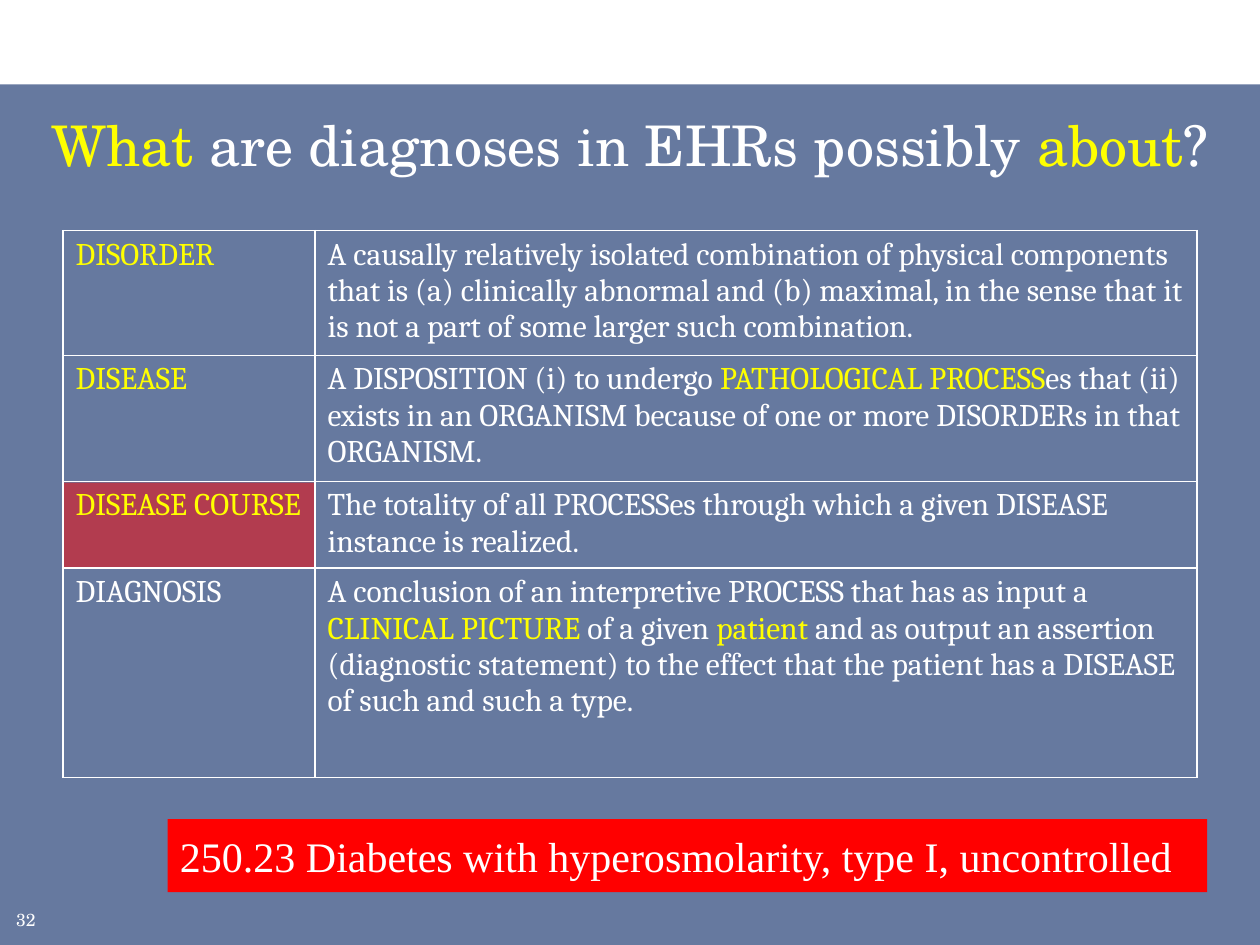
from lxml.etree import SubElement, fromstring
from pptx import Presentation
from pptx.dml.color import RGBColor
from pptx.enum.shapes import MSO_SHAPE
from pptx.enum.text import MSO_ANCHOR, PP_ALIGN
from pptx.oxml.ns import nsdecls, qn
from pptx.util import Inches, Pt

WHITE, YELLOW, RED, NAVY = "FFFFFF", "FFFF00", "FF0000", "002060"
SERIF, BODY = "TeX Gyre Schola", "Cambria"

# Each cell is a list of runs; highlighted runs are (text, colour) pairs
ROWS = [
    (0.99, [("DISORDER", YELLOW)],
     ["A causally relatively isolated combination of physical components that is "
      "(a) clinically abnormal and (b) maximal, in the sense that it is not a part "
      "of some larger such combination."]),
    (1, [("DISEASE", YELLOW)],
     ["A DISPOSITION (i) to undergo ", ("PATHOLOGICAL PROCESS", YELLOW),
      "es that (ii) exists in an ORGANISM because of one or more DISORDERs in that "
      "ORGANISM."]),
    (0.69, [("DISEASE COURSE", YELLOW)],
     ["The totality of all PROCESSes through which a given DISEASE instance is "
      "realized."]),
    (1.66, ["DIAGNOSIS"],
     ["A conclusion of an interpretive PROCESS that has as input a ",
      ("CLINICAL PICTURE ", YELLOW), "of a given ", ("patient", YELLOW),
      " and as output an assertion (diagnostic statement) to the effect that the "
      "patient has a DISEASE of such and such a type."]),
]


def rgb(color):
    return RGBColor.from_string(color)


def write(tf, runs, size, font, align=PP_ALIGN.LEFT, anchor=MSO_ANCHOR.TOP):
    tf.word_wrap = True
    tf.vertical_anchor = anchor
    p = tf.paragraphs[0]
    p.alignment = align
    for run in runs:
        text, color = (run, WHITE) if isinstance(run, str) else run
        r = p.add_run()
        r.text = text
        r.font.size = Pt(size)
        r.font.name = font
        r.font.bold = False
        r.font.color.rgb = rgb(color)


def add_rect(s, left, top, width, height, color, alpha=None):
    sp = s.shapes.add_shape(MSO_SHAPE.RECTANGLE, Inches(left), Inches(top),
                            Inches(width), Inches(height))
    sp.shadow.inherit = False
    sp.line.fill.background()
    sp.fill.solid()
    sp.fill.fore_color.rgb = rgb(color)
    if alpha is not None:
        clr = sp.fill._xPr.find(qn("a:solidFill"))[0]
        SubElement(clr, qn("a:alpha")).set("val", str(alpha * 1000))
    return sp


def set_borders(cell, color, width):
    tcPr = cell._tc.get_or_add_tcPr()
    for i, side in enumerate(("lnL", "lnR", "lnT", "lnB")):
        tcPr.insert(i, fromstring(
            f'<a:{side} {nsdecls("a")} w="{Pt(width)}"><a:solidFill>'
            f'<a:srgbClr val="{color}"/></a:solidFill></a:{side}>'))


def add_title(s, runs):
    title = s.shapes.title
    title.left, title.top = Inches(0.25), Inches(0.83)
    title.width, title.height = Inches(9.5), Inches(0.83)
    write(title.text_frame, runs, 32, SERIF, align=PP_ALIGN.CENTER)


def add_definitions(s):
    frame = s.shapes.add_table(len(ROWS), 2, Inches(0.5), Inches(1.83),
                               Inches(9), Inches(4.34))
    table = frame.table
    table.first_row = table.horz_banding = False
    table.columns[0].width, table.columns[1].width = Inches(2), Inches(7)
    for row, (height, *contents) in zip(table.rows, ROWS):
        row.height = Inches(height)
        for cell, runs in zip(row.cells, contents):
            cell.fill.background()
            set_borders(cell, WHITE, 1)
            write(cell.text_frame, runs, 18, BODY)


def main():
    prs = Presentation()
    prs.slide_width, prs.slide_height = Inches(10), Inches(7.5)
    s = prs.slides.add_slide(prs.slide_layouts[5])

    # Backdrop and slide number
    add_rect(s, 0, 0.67, 10, 6.83, NAVY, alpha=60)
    number = s.shapes.add_textbox(Inches(0.03), Inches(7.17), Inches(0.39), Inches(0.25))
    write(number.text_frame, ["32"], 10, SERIF, anchor=MSO_ANCHOR.MIDDLE)

    # Highlight behind the "disease course" cell
    add_rect(s, 0.5, 3.83, 2, 0.67, RED, alpha=50)

    # Title, brought in front of the backdrop
    add_title(s, [("What", YELLOW), " are diagnoses in EHRs possibly ",
                  ("about", YELLOW), "?"])
    s.shapes._spTree.append(s.shapes.title._element)

    add_definitions(s)

    # Example diagnosis
    example = add_rect(s, 1.33, 6.5, 8.25, 0.58, RED)
    write(example.text_frame,
          ["250.23 Diabetes with hyperosmolarity, type I, uncontrolled"],
          24, "Times New Roman", anchor=MSO_ANCHOR.MIDDLE)

    prs.save("out.pptx")


if __name__ == "__main__":
    main()
